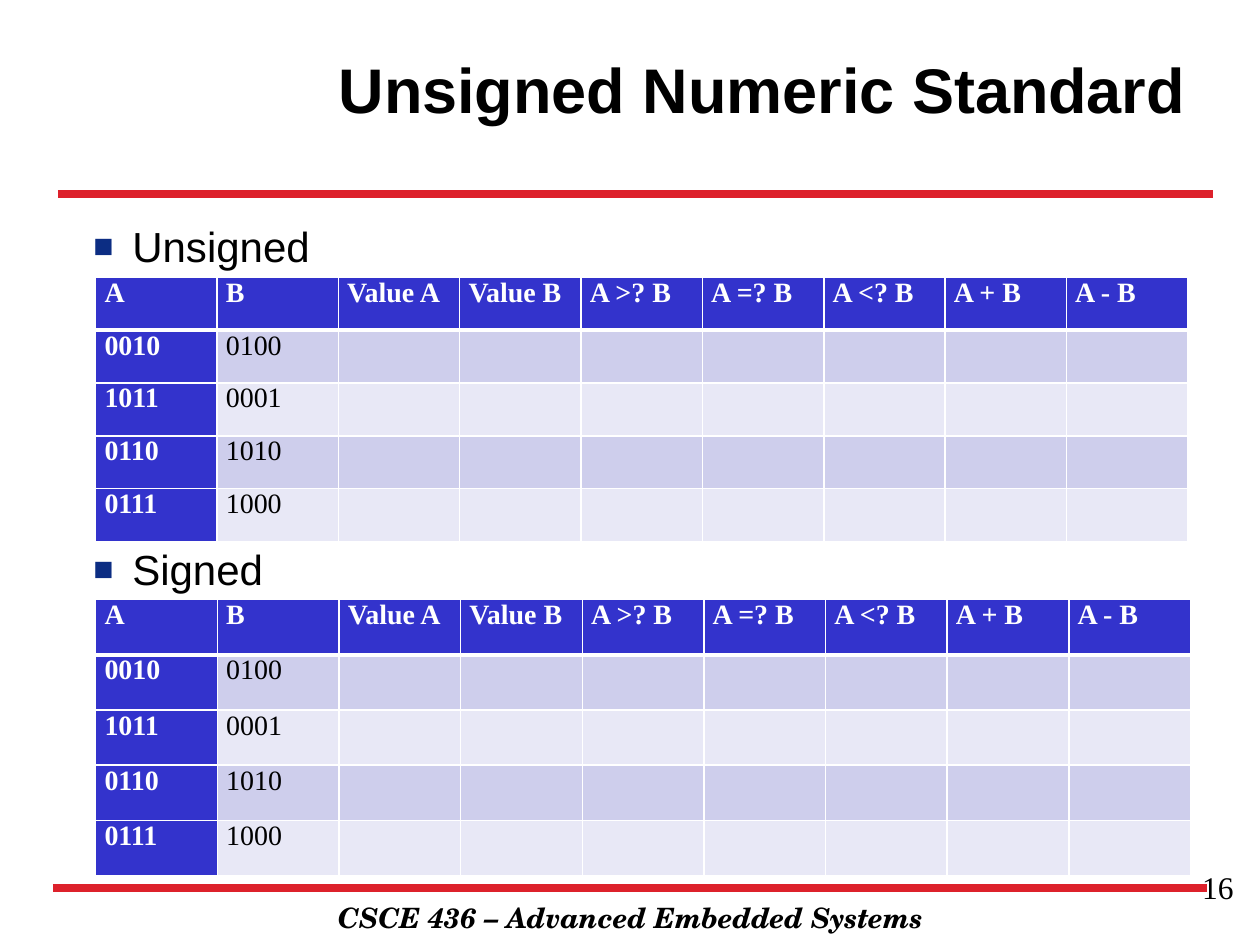
from dataclasses import dataclass

from lxml.etree import SubElement as Sub
from pptx import Presentation
from pptx.dml.color import RGBColor
from pptx.enum.text import MSO_ANCHOR as Anchor, MSO_AUTO_SIZE as Fit, PP_ALIGN as Align
from pptx.oxml.ns import qn
from pptx.util import Emu, Inches, Pt

# The page is a grid of 100 columns by 75 rows
COLS, ROWS = 100, 75
UNIT = Inches(0.1)
HUES = {
    "ink": "000000", "paper": "FFFFFF", "rule": "DD212B", "mark": "0C2D83",
    "head": "3333CC", "odd": "CECEEC", "even": "E8E8F6",
}
SANS, SERIF, SCHOOL = "Arial", "Times New Roman", "TeX Gyre Schola"
HEADS = ["A", "B", "Value A", "Value B", "A >? B", "A =? B", "A <? B", "A + B", "A - B"]
PAIRS = [("0010", "0100"), ("1011", "0001"), ("0110", "1010"), ("0111", "1000")]


@dataclass
class Box:
    left: float
    top: float
    width: float
    height: float

    def emu(self) -> list[Emu]:
        return [size(n) for n in (self.left, self.top, self.width, self.height)]


@dataclass
class Rule:
    left: float
    right: float
    row: float


TABLES = [Box(7.6, 22, 86.7, 21), Box(7.6, 47.6, 86.9, 21.9)]
RULES = [Rule(4.2, 95.8, 70.5), Rule(4.6, 96.3, 15.4)]


def size(units: float) -> Emu:
    return Emu(round(units * UNIT))


def hue(name: str) -> RGBColor:
    return RGBColor.from_string(HUES[name])


def write(para, text: str, *, pt: float, face: str, color: str = "ink",
          bold: bool = False, slant: bool = False, align=Align.LEFT) -> None:
    para.alignment = align
    run = para.add_run()
    run.text = text
    font = run.font
    font.size, font.name, font.bold, font.italic = Pt(pt), face, bold, slant
    font.color.rgb = hue(color)


def place(shape, box: Box, anchor=Anchor.TOP):
    """Move a text shape to its box and return its text frame."""
    shape.left, shape.top, shape.width, shape.height = box.emu()
    frame = shape.text_frame
    frame.word_wrap, frame.auto_size = True, Fit.NONE
    frame.vertical_anchor = anchor
    return frame


def label(slide, box: Box, text: str, **style) -> None:
    frame = place(slide.shapes.add_textbox(*box.emu()), box)
    write(frame.paragraphs[0], text, **style)


def bullet(para, text: str, gap: float) -> None:
    props = para._p.get_or_add_pPr()
    props.set("marL", str(size(3.1)))
    props.set("indent", str(-size(3.1)))
    para.space_before = Pt(gap)
    Sub(Sub(props, qn("a:buClr")), qn("a:srgbClr"), val=HUES["mark"])
    Sub(props, qn("a:buSzPct"), val="80000")
    Sub(props, qn("a:buFont"), typeface=SANS)
    Sub(props, qn("a:buChar"), char="■")
    write(para, text, pt=24, face=SANS)


def rule(slide, line: Rule) -> None:
    y = size(line.row)
    bar = slide.shapes.add_connector(1, size(line.left), y, size(line.right), y)
    bar.line.color.rgb = hue("rule")
    bar.line.width = Pt(4.5)
    Sub(bar._element.spPr, qn("a:effectLst"))


def edge(cell, row: int) -> None:
    """Draw white borders, thick between the head row and the rest."""
    props = cell._tc.get_or_add_tcPr()
    for side in "LRTB":
        thick = (row, side) in ((0, "B"), (1, "T"))
        line = Sub(props, qn(f"a:ln{side}"), w=str(Pt(3 if thick else 1)))
        Sub(Sub(line, qn("a:solidFill")), qn("a:srgbClr"), val=HUES["paper"])


def table(slide, box: Box) -> None:
    data = [HEADS] + [[*pair] + [""] * (len(HEADS) - 2) for pair in PAIRS]
    grid = slide.shapes.add_table(len(data), len(HEADS), *box.emu()).table
    grid.horz_banding = False
    for col in grid.columns:
        col.width = size(box.width / len(HEADS))
    for r, texts in enumerate(data):
        grid.rows[r].height = size(box.height / len(data))
        for c, text in enumerate(texts):
            cell = grid.cell(r, c)
            key = r == 0 or c == 0
            edge(cell, r)
            cell.fill.solid()
            cell.fill.fore_color.rgb = hue("head" if key else "odd" if r % 2 else "even")
            cell.margin_left = cell.margin_right = size(0.7)
            cell.margin_top = cell.margin_bottom = 0
            if text:
                write(cell.text_frame.paragraphs[0], text, pt=16, face=SERIF,
                      color="paper" if key else "ink", bold=key)


def main() -> None:
    deck = Presentation()
    deck.slide_width, deck.slide_height = size(COLS), size(ROWS)
    slide = deck.slides.add_slide(deck.slide_layouts[1])
    title, body = slide.placeholders

    label(slide, Box(14.2, 71, 71.7, 3.7), "CSCE 436 – Advanced Embedded Systems",
          pt=16, face=SCHOOL, bold=True, slant=True, align=Align.CENTER)
    for line in RULES:
        rule(slide, line)

    frame = place(title, Box(20.9, 0.8, 74.2, 12.5), Anchor.MIDDLE)
    write(frame.paragraphs[0], "Unsigned Numeric Standard",
          pt=36, face=SANS, bold=True, align=Align.RIGHT)

    frame = place(body, Box(6.4, 17, 88.9, 47.3))
    bullet(frame.paragraphs[0], "Unsigned", 0)
    bullet(frame.add_paragraph(), "Signed", 156)

    label(slide, Box(75.6, 68.4, 23.3, 5.2), "16", pt=18, face=SERIF, align=Align.RIGHT)
    for box in TABLES:
        table(slide, box)
    deck.save("out.pptx")


if __name__ == "__main__":
    main()
